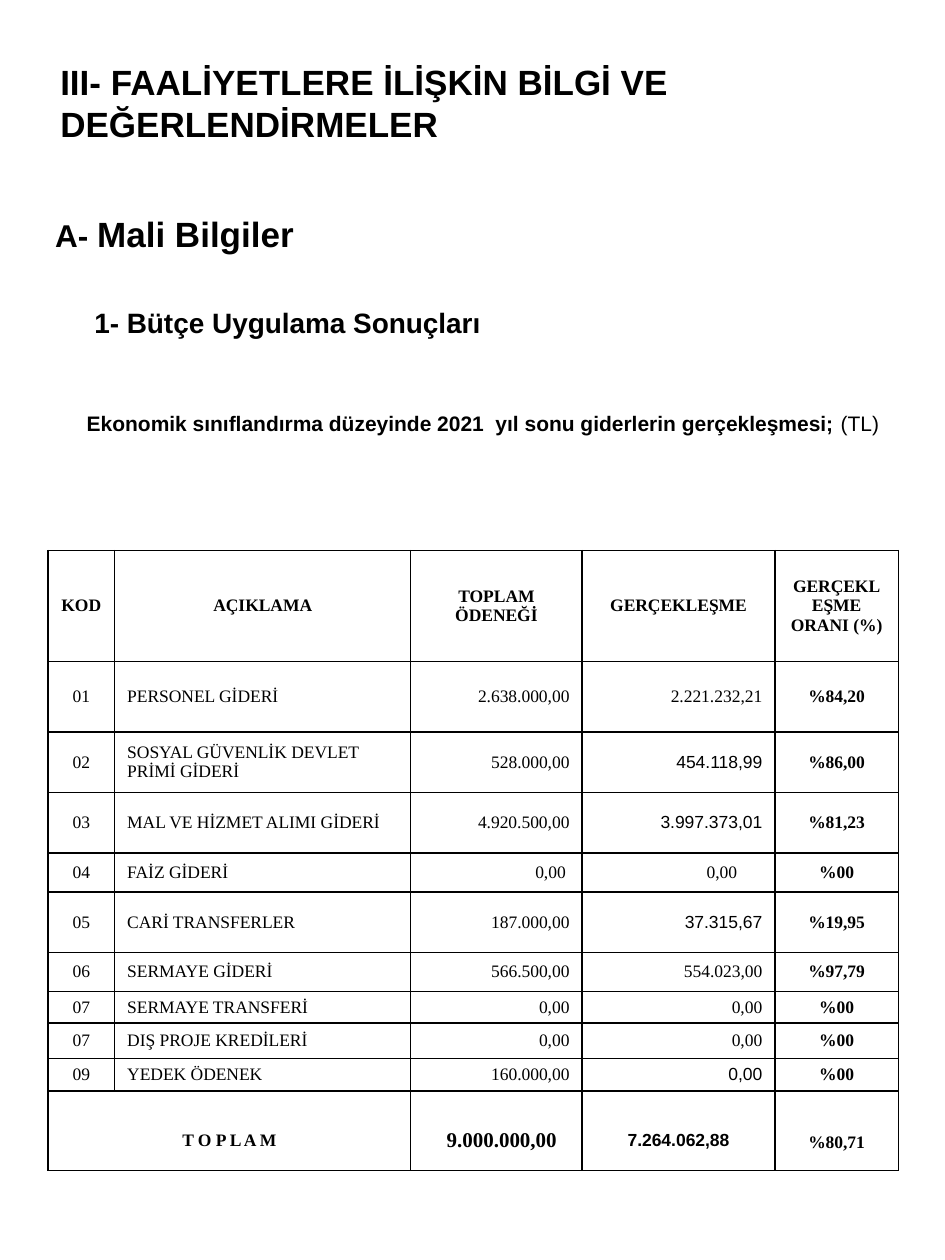
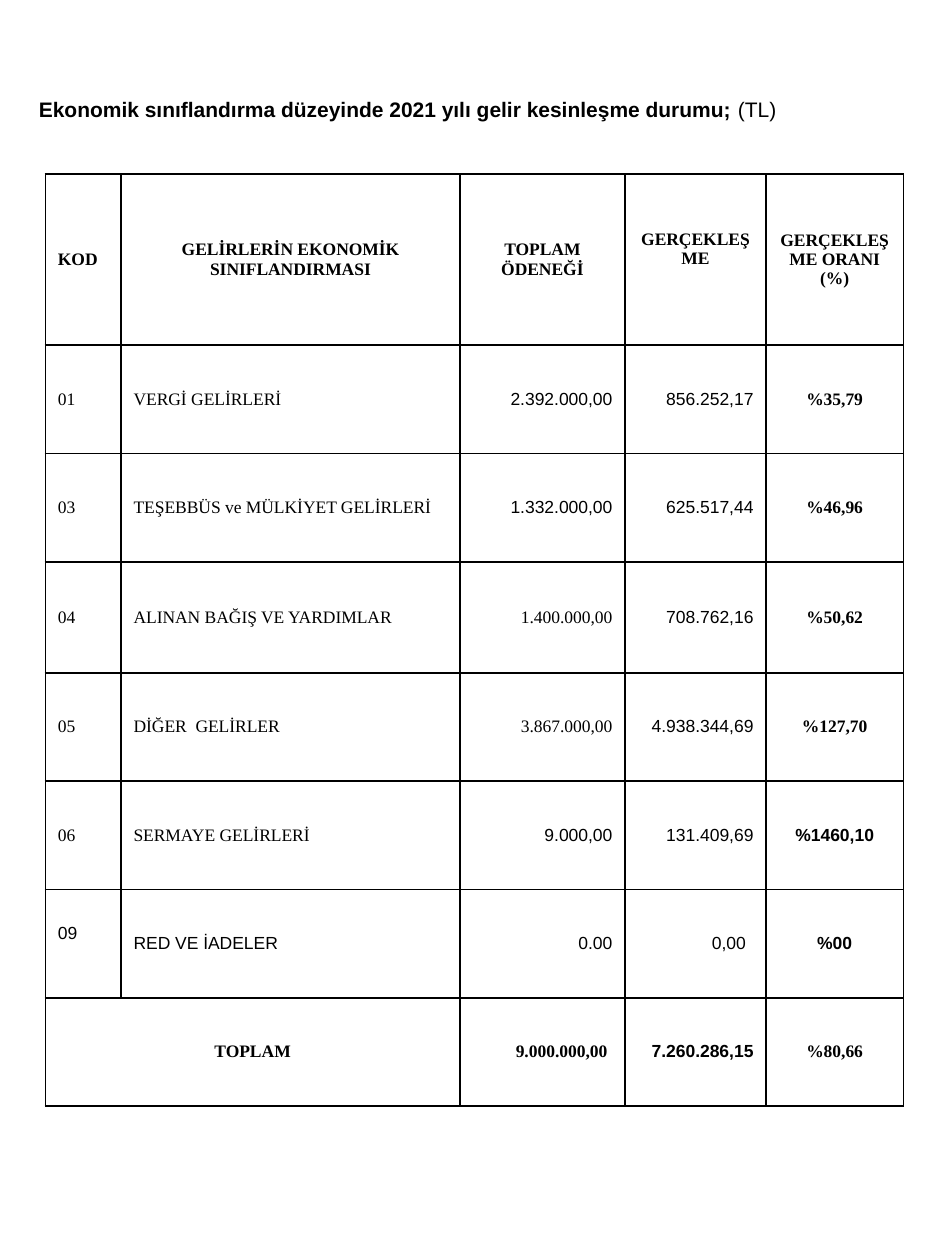
from dataclasses import dataclass

from lxml.etree import SubElement
from pptx import Presentation
from pptx.dml.color import RGBColor
from pptx.enum.text import MSO_ANCHOR, PP_ALIGN
from pptx.oxml.ns import qn
from pptx.util import Inches, Pt

LEFT, CENTER, RIGHT = PP_ALIGN.LEFT, PP_ALIGN.CENTER, PP_ALIGN.RIGHT


@dataclass(frozen=True)
class Theme:
    """Colours, fonts and type sizes shared by both slides."""

    ink: str = "000000"
    heading_font: str = "Arial"
    table_font: str = "Times New Roman"
    title: int = 20
    section: int = 18
    topic: int = 16
    caption: int = 12
    cell: int = 10
    border: int = 1


def set_values(target, values):
    """Set each named value on the target."""
    for name, value in values.items():
        setattr(target, name, value)


class Report:
    """Holds the deck, its theme and the current page."""

    def __init__(self, theme):
        """Start an empty portrait deck."""
        self.theme = theme
        self.deck = Presentation()
        set_values(self.deck, {"slide_width": Inches(7.5), "slide_height": Inches(10)})
        self.page = None

    def add_page(self):
        """Add a blank page and make it current."""
        self.page = self.deck.slides.add_slide(self.deck.slide_layouts[6])

    def add_span(self, para, text, size, bold=True, font=None):
        """Add one formatted span to a paragraph."""
        span = para.add_run()
        span.text = text
        set_values(span.font, {"size": Pt(size), "bold": bold,
                               "name": font or self.theme.heading_font})
        span.font.color.rgb = RGBColor.from_string(self.theme.ink)

    def add_text(self, place, lines, anchor=MSO_ANCHOR.TOP, top=0.05):
        """Add a text box; each line is indent, space before and spans."""
        box = self.page.shapes.add_textbox(*map(Inches, place))
        frame = box.text_frame
        set_values(frame, {"word_wrap": True, "vertical_anchor": anchor,
                           "margin_top": Inches(top)})
        for number, (indent, gap, spans) in enumerate(lines):
            para = frame.add_paragraph() if number else frame.paragraphs[0]
            para.space_before = Pt(gap)
            para._p.get_or_add_pPr().set("marL", str(Inches(indent)))
            for span in spans:
                self.add_span(para, *span)

    def add_borders(self, cell):
        """Draw a solid line on each side of a cell."""
        properties = cell._tc.get_or_add_tcPr()
        for side in ("a:lnL", "a:lnR", "a:lnT", "a:lnB"):
            line = SubElement(properties, qn(side), w=str(Pt(self.theme.border)))
            fill = SubElement(line, qn("a:solidFill"))
            SubElement(fill, qn("a:srgbClr"), val=self.theme.ink)

    def fill_cell(self, cell, text, align=CENTER, bold=False, font=None, size=None, **margins):
        """Fill a table cell with its borders, margins and text."""
        self.add_borders(cell)
        cell.fill.background()
        inset = {"left": 0.1, "right": 0.1, "top": 0.03, "bottom": 0.03, **margins}
        set_values(cell, {f"margin_{side}": Inches(gap) for side, gap in inset.items()})
        cell.vertical_anchor = MSO_ANCHOR.MIDDLE
        para = cell.text_frame.paragraphs[0]
        para.alignment = align
        if text:
            self.add_span(para, text, size or self.theme.cell, bold,
                          font or self.theme.table_font)

    def add_budget_table(self, corner, widths, heights, rows, code_align, arial, special):
        """Add a budget table with a header row and a merged total label."""
        place = (*corner, sum(widths), sum(heights))
        frame = self.page.shapes.add_table(len(rows), len(widths), *map(Inches, place))
        table = frame.table
        set_values(table, {"first_row": False, "horz_banding": False})
        for column, width in zip(table.columns, widths):
            column.width = Inches(width)
        for row, height in zip(table.rows, heights):
            row.height = Inches(height)
        last = len(rows) - 1
        table.cell(last, 0).merge(table.cell(last, 1))
        aligns = (code_align, LEFT, RIGHT, RIGHT, CENTER)
        for i, texts in enumerate(rows):
            for j, text in enumerate(texts):
                centered = (i == 0 and j > 0) or (i == last and j < 2)
                style = {"align": CENTER if centered else aligns[j],
                         "bold": i in (0, last) or j == 4}
                if (i, j) in arial:
                    style["font"] = self.theme.heading_font
                self.fill_cell(table.cell(i, j), text, **{**style, **special.get((i, j), {})})


EXPENSES = [
    ("KOD", "AÇIKLAMA", "TOPLAM ÖDENEĞİ", "GERÇEKLEŞME", "GERÇEKLEŞME ORANI (%)"),
    ("01", "PERSONEL GİDERİ", "2.638.000,00", "2.221.232,21", "%84,20"),
    ("02", "SOSYAL GÜVENLİK DEVLET PRİMİ GİDERİ", "528.000,00", "454.118,99", "%86,00"),
    ("03", "MAL VE HİZMET ALIMI GİDERİ", "4.920.500,00", "3.997.373,01", "%81,23"),
    ("04", "FAİZ GİDERİ", "0,00", "0,00", "%00"),
    ("05", "CARİ TRANSFERLER", "187.000,00", "37.315,67", "%19,95"),
    ("06", "SERMAYE GİDERİ", "566.500,00", "554.023,00", "%97,79"),
    ("07", "SERMAYE TRANSFERİ", "0,00", "0,00", "%00"),
    ("07", "DIŞ PROJE KREDİLERİ", "0,00", "0,00", "%00"),
    ("09", "YEDEK ÖDENEK", "160.000,00", "0,00", "%00"),
    ("T O P L A M", "", "9.000.000,00", "7.264.062,88", "%80,71"),
]

INCOME = [
    ("KOD", "GELİRLERİN EKONOMİK SINIFLANDIRMASI", "TOPLAM ÖDENEĞİ", "GERÇEKLEŞME",
     "GERÇEKLEŞME ORANI (%)"),
    ("01", "VERGİ GELİRLERİ", "2.392.000,00", "856.252,17", "%35,79"),
    ("03", "TEŞEBBÜS ve MÜLKİYET GELİRLERİ", "1.332.000,00", "625.517,44", "%46,96"),
    ("04", "ALINAN BAĞIŞ VE YARDIMLAR", "1.400.000,00", "708.762,16", "%50,62"),
    ("05", "DİĞER  GELİRLER", "3.867.000,00", "4.938.344,69", "%127,70"),
    ("06", "SERMAYE GELİRLERİ", "9.000,00", "131.409,69", "%1460,10"),
    ("09", "RED VE İADELER", "0.00", "0,00", "%00"),
    ("TOPLAM", "", "9.000.000,00", "7.260.286,15", "%80,66"),
]


def build_expenses(report):
    """Build the page on year-end expenses."""
    theme = report.theme
    report.add_page()
    report.add_text((0.38, 0.4, 7.12, 0.82), [
        (0, 0, [("III- FAALİYETLERE İLİŞKİN BİLGİ VE DEĞERLENDİRMELER", theme.title)]),
    ], MSO_ANCHOR.MIDDLE)
    report.add_text((0.21, 1.61, 7.29, 8.11), [
        (0.13, 0, [("A- ", theme.section), ("Mali Bilgiler", theme.title)]),
        (0.44, 29, [("1- Bütçe Uygulama Sonuçları", theme.topic)]),
        (0.38, 41, [("Ekonomik sınıflandırma düzeyinde 2021  yıl sonu giderlerin gerçekleşmesi;",
                     theme.caption), (" (TL)", theme.caption, False)]),
    ], top=0.08)
    lowered = {"top": 0.19}
    report.add_budget_table(
        (0.38, 4.37), (0.53, 2.35, 1.36, 1.53, 0.98),
        (0.88, 0.56, 0.48, 0.48, 0.31, 0.48, 0.31, 0.25, 0.28, 0.26, 0.63),
        EXPENSES, CENTER, {(2, 3), (3, 3), (5, 3), (9, 3), (10, 3)},
        {(4, 2): {"right": 0.13}, (4, 3): {"right": 0.3}, (10, 0): lowered,
         (10, 2): {**lowered, "right": 0.2, "size": theme.caption},
         (10, 3): {**lowered, "align": CENTER}, (10, 4): {"top": 0.22}})


def build_income(report):
    """Build the page on settled income."""
    theme = report.theme
    report.add_page()
    report.add_text((0.21, 0.43, 7.29, 8.74), [
        (0, 0, [("Ekonomik sınıflandırma düzeyinde 2021 yılı gelir kesinleşme durumu;",
                 theme.caption), (" (TL)", theme.caption, False)]),
    ], top=0.34)
    raised = {"bottom": 0.19}
    arial = {(1, 2), (2, 2), (5, 2), (5, 4)}
    arial |= {(row, 3) for row in range(1, 8)} | {(6, column) for column in range(5)}
    report.add_budget_table(
        (0.36, 1.38), (0.6, 2.69, 1.31, 1.12, 1.09),
        (1.36, 0.86, 0.86, 0.88, 0.86, 0.86, 0.86, 0.86),
        INCOME, LEFT, arial,
        {(0, 3): raised, (6, 0): raised, (6, 3): {"right": 0.16}, (7, 2): {"right": 0.14}})


def main():
    """Build both pages and save the deck."""
    report = Report(Theme())
    build_expenses(report)
    build_income(report)
    report.deck.save("out.pptx")


if __name__ == "__main__":
    main()
